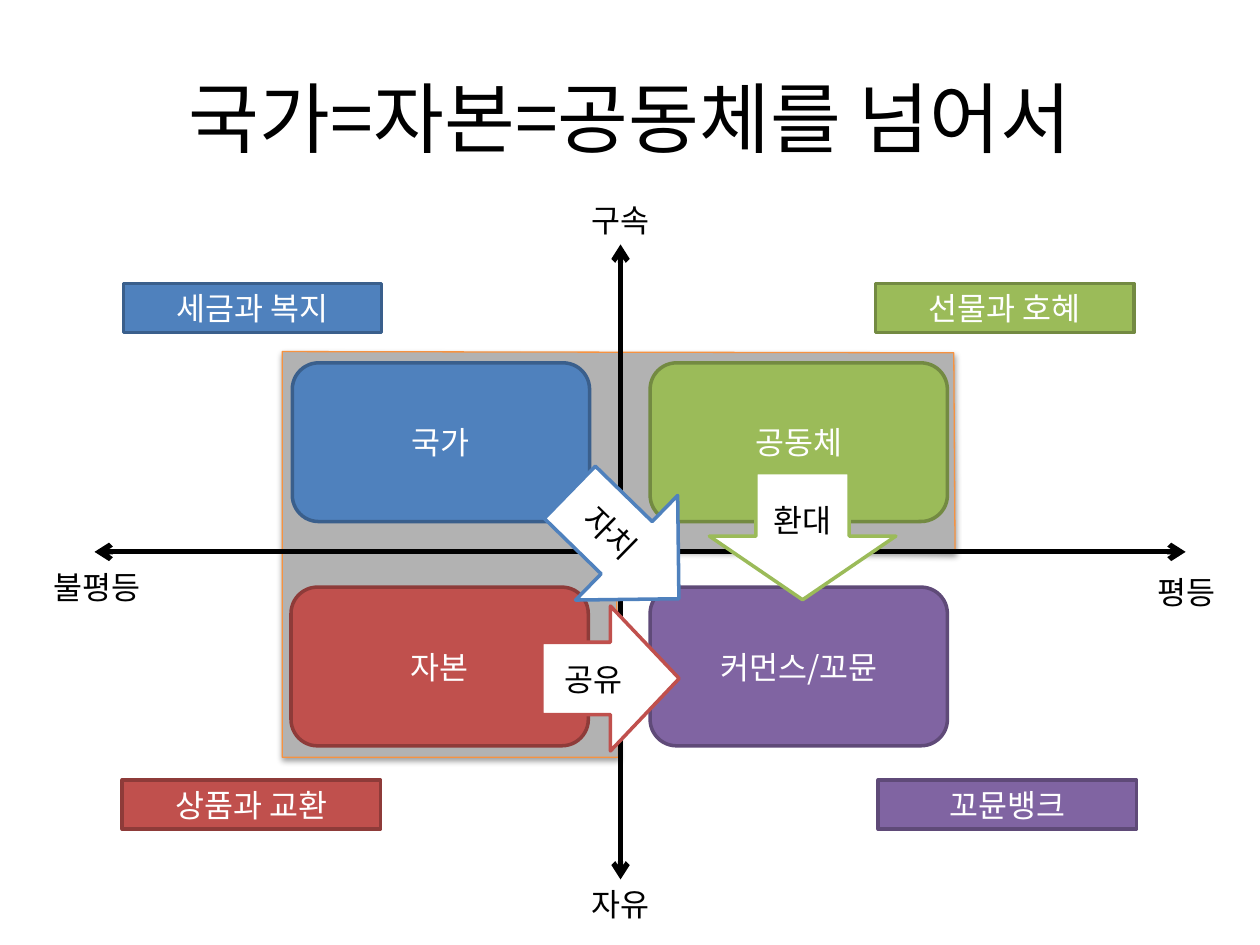
from lxml import etree
from pptx import Presentation
from pptx.dml.color import RGBColor
from pptx.enum import shapes, text
from pptx.oxml import parse_xml
from pptx.oxml.ns import qn
from pptx.util import Inches, Pt

FONT = "Noto Sans CJK KR"
COLOURS = {
    "black": "000000", "white": "FFFFFF", "grey": "B2B2B2", "orange": "F69240",
    "blue": "4F81BD", "blue_edge": "3A5F8C",
    "green": "9BBB59", "green_edge": "738A42",
    "red": "C0504D", "red_edge": "8E3B39",
    "purple": "8064A2", "purple_edge": "5F4A78",
}
KIND = shapes.MSO_SHAPE

TITLE = "국가=자본=공동체를 넘어서"
# colour, quadrant text, its left and top, tag text, its left and top
QUADRANTS = [
    ("blue", "국가", 2.32, 2.88, "세금과 복지", 0.98, 2.25),
    ("red", "자본", 2.31, 4.66, "상품과 교환", 0.97, 6.19),
    ("purple", "커먼스/꼬뮨", 5.16, 4.66, "꼬뮨뱅크", 6.97, 6.19),
    ("green", "공동체", 5.16, 2.88, "선물과 호혜", 6.95, 2.25),
]
QUADRANT_SIZE = (2.36, 1.26)
TAG_SIZE = (2.05, 0.39)
# text, left, top, width
AXIS_LABELS = [
    ("구속", 4.53, 1.55, 0.79),
    ("자유", 4.53, 6.98, 0.79),
    ("불평등", 0.18, 4.46, 1.18),
    ("평등", 9, 4.5, 0.83),
]
# text, kind, edge colour, place, rotation
MOVES = [
    ("공유", KIND.RIGHT_ARROW, "red", (4.3, 4.81, 1.09, 1.15), 0),
    ("환대", KIND.DOWN_ARROW, "green", (5.63, 3.75, 1.48, 1.01), 0),
    ("자치", KIND.RIGHT_ARROW, "blue", (4.35, 3.75, 1.21, 1.16), 44.3),
]
OLD_ORDER = [(2.24, 2.79), (7.57, 2.8), (7.58, 4.39), (4.89, 4.36), (4.91, 6.01), (2.24, 6.01)]


def rgb(name):
    return RGBColor.from_string(COLOURS[name])


def write(box, words, colour, size=18):
    frame = box.text_frame
    frame.word_wrap = True
    frame.vertical_anchor = text.MSO_ANCHOR.MIDDLE
    para = frame.paragraphs[0]
    para.alignment = text.PP_ALIGN.CENTER
    span = para.add_run()
    span.text = words
    span.font.size = Pt(size)
    span.font.name = FONT
    span.font.color.rgb = rgb(colour)
    east_asian = etree.SubElement(span.font._element, qn("a:ea"))
    east_asian.set("typeface", FONT)


def paint(box, fill, edge=None, width=2):
    box.shadow.inherit = False
    box.fill.solid()
    box.fill.fore_color.rgb = rgb(fill)
    if edge:
        box.line.color.rgb = rgb(edge)
        box.line.width = Pt(width)
    else:
        box.line.fill.background()


def add_box(page, kind, place, words, fill, edge=None, colour="white"):
    box = page.shapes.add_shape(kind, *map(Inches, place))
    paint(box, fill, edge)
    write(box, words, colour)
    return box


def add_old_order(page):
    """Grey L-shaped area behind state, capital and community."""
    points = [(Inches(x), Inches(y)) for x, y in OLD_ORDER]
    builder = page.shapes.build_freeform(*points[0], scale=1.0)
    builder.add_line_segments(points[1:], close=True)
    area = builder.convert_to_shape()
    paint(area, "grey", "orange", 0.75)
    effects = area._element.spPr.find(qn("a:effectLst"))
    effects.append(parse_xml(
        '<a:outerShdw xmlns:a="http://schemas.openxmlformats.org/drawingml/2006/main" '
        f'blurRad="{Pt(3.1)}" dist="{Pt(1.6)}" dir="5400000" rotWithShape="0">'
        f'<a:srgbClr val="{COLOURS["black"]}"><a:alpha val="38000"/></a:srgbClr></a:outerShdw>'))


def add_axis(page, x1, y1, x2, y2):
    axis = page.shapes.add_connector(
        shapes.MSO_CONNECTOR.STRAIGHT, *map(Inches, (x1, y1, x2, y2)))
    axis.line.color.rgb = rgb("black")
    axis.line.width = Pt(3)
    line = axis.line._get_or_add_ln()
    for end in ("a:headEnd", "a:tailEnd"):
        etree.SubElement(line, qn(end)).set("type", "arrow")
    etree.SubElement(axis._element.spPr, qn("a:effectLst"))
    return axis


def main():
    deck = Presentation()
    deck.slide_width, deck.slide_height = Inches(10), Inches(7.5)
    page = deck.slides.add_slide(deck.slide_layouts[6])

    add_old_order(page)
    title = page.shapes.add_textbox(*map(Inches, (0.5, 0.3, 9, 1.25)))
    write(title, TITLE, "black", 44)

    for colour, _, _, _, tag, left, top in QUADRANTS:
        add_box(page, KIND.RECTANGLE, (left, top, *TAG_SIZE), tag, colour, colour + "_edge")

    labels = [
        add_box(page, KIND.RECTANGLE, (left, top, width, 0.39), words, "white", colour="black")
        for words, left, top, width in AXIS_LABELS]
    vertical = add_axis(page, 4.92, 1.94, 4.92, 6.98)
    vertical.begin_connect(labels[0], 2)
    vertical.end_connect(labels[1], 0)
    add_axis(page, 9.41, 4.38, 0.75, 4.38)

    for colour, words, left, top, *_ in QUADRANTS:
        add_box(page, KIND.ROUNDED_RECTANGLE, (left, top, *QUADRANT_SIZE),
                words, colour, colour + "_edge")

    for words, kind, edge, place, rotation in MOVES:
        arrow = add_box(page, kind, place, words, "white", edge, "black")
        arrow.rotation = rotation

    deck.save("out.pptx")


if __name__ == "__main__":
    main()
